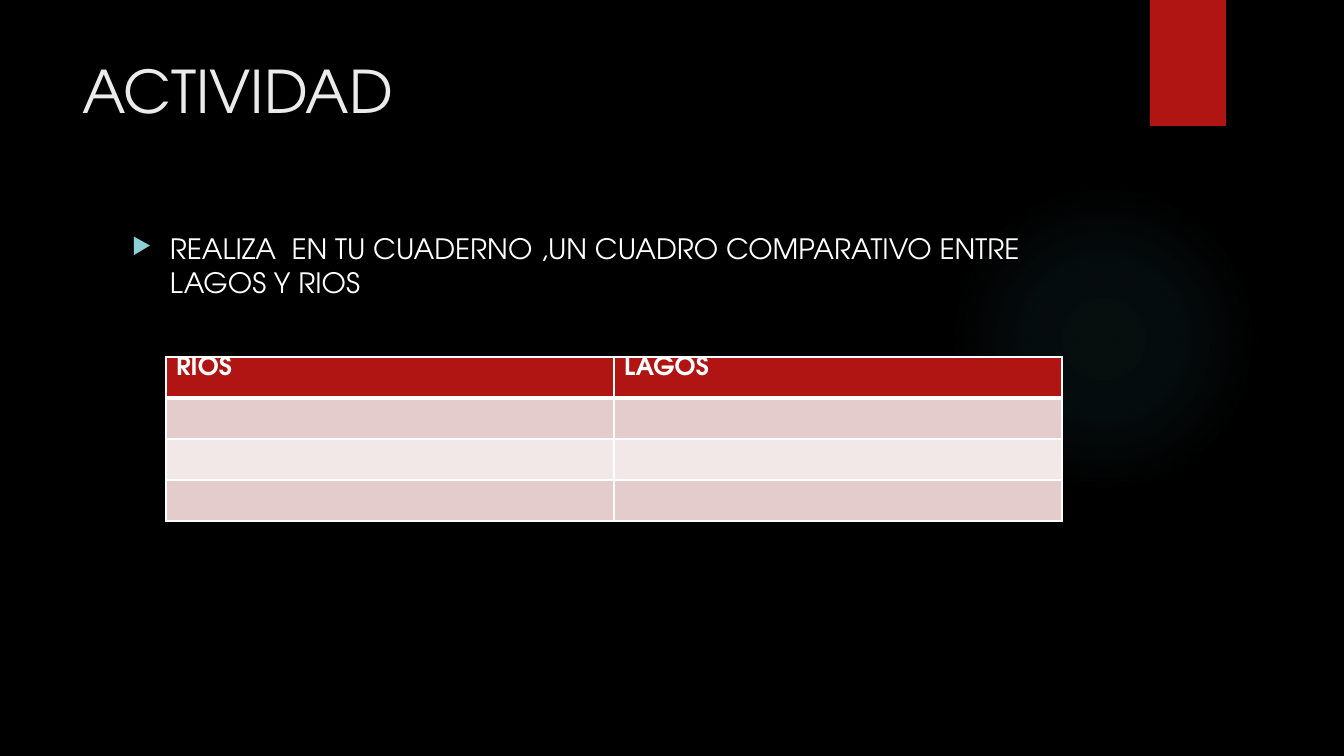
from lxml.etree import SubElement
from pptx import Presentation
from pptx.dml.color import RGBColor
from pptx.enum.shapes import MSO_SHAPE
from pptx.enum.text import MSO_ANCHOR, MSO_AUTO_SIZE, PP_ALIGN
from pptx.oxml import parse_xml
from pptx.oxml.ns import nsdecls, qn
from pptx.util import Pt

EMU_PER_PX = 914400 / 100.8
FONT = "TeX Gyre Adventor"
COLORS = {
    "background": "000000",
    "red": "B01513",
    "glow": "50B9C1",
    "title": "EBEBEB",
    "white": "FFFFFF",
    "bullet": "8AD0D6",
    "band_dark": "E4CCCC",
    "band_light": "F2E8E7",
}


def px(length):
    return round(length * EMU_PER_PX)


def rgb(name):
    return RGBColor.from_string(COLORS[name])


class SlideBuilder:
    def __init__(self, deck):
        self.slide = deck.slides.add_slide(deck.slide_layouts[5])
        background = self.slide.background.fill
        background.solid()
        background.fore_color.rgb = rgb("background")

    def add_run(self, paragraph, text, size, color, bold=False):
        run = paragraph.add_run()
        run.text = text
        run.font.name = FONT
        run.font.size = Pt(size)
        run.font.bold = bold
        run.font.color.rgb = rgb(color)

    def shape(self, kind, left, top, width, height, color):
        shape = self.slide.shapes.add_shape(kind, px(left), px(top), px(width), px(height))
        shape.shadow.inherit = False
        shape.fill.solid()
        shape.fill.fore_color.rgb = rgb(color)
        shape.line.fill.background()
        return shape

    def glow(self, left, top, diameter, color, stops):
        """Circle that fades out; stops are (position %, opacity %)."""
        circle = self.shape(MSO_SHAPE.OVAL, left, top, diameter, diameter, color)
        stop_xml = "".join(
            f'<a:gs pos="{position * 1000}"><a:srgbClr val="{COLORS[color]}">'
            f'<a:alpha val="{opacity * 1000}"/></a:srgbClr></a:gs>'
            for position, opacity in stops
        )
        gradient = parse_xml(
            f'<a:gradFill {nsdecls("a")} rotWithShape="1"><a:gsLst>{stop_xml}</a:gsLst>'
            '<a:path path="circle"><a:fillToRect l="50000" t="50000" r="50000" b="50000"/>'
            "</a:path></a:gradFill>"
        )
        properties = circle.fill._xPr
        properties.replace(properties.find(qn("a:solidFill")), gradient)

    def title(self, text, left, top, width, height, size):
        title = self.slide.shapes.title
        title.left, title.top = px(left), px(top)
        title.width, title.height = px(width), px(height)
        frame = title.text_frame
        frame.auto_size = MSO_AUTO_SIZE.NONE
        frame.word_wrap = True
        frame.vertical_anchor = MSO_ANCHOR.TOP
        heading = frame.paragraphs[0]
        heading.alignment = PP_ALIGN.LEFT
        self.add_run(heading, text, size, "title")

    def bullet(self, text, left, top, width, height, size, indent):
        box = self.slide.shapes.add_textbox(px(left), px(top), px(width), px(height))
        box.text_frame.word_wrap = True
        instruction = box.text_frame.paragraphs[0]
        properties = instruction._p.get_or_add_pPr()
        properties.set("marL", str(px(indent)))
        properties.set("indent", str(-px(indent)))
        bullet_color = SubElement(properties, qn("a:buClr"))
        SubElement(bullet_color, qn("a:srgbClr"), val=COLORS["bullet"])
        SubElement(properties, qn("a:buSzPct"), val="80000")
        SubElement(properties, qn("a:buChar"), char="▶")
        self.add_run(instruction, text, size, "white")

    def border(self, cell, widths):
        """Cell borders; widths in points for left, right, top, bottom."""
        properties = cell._tc.get_or_add_tcPr()
        for index, (side, width) in enumerate(zip("LRTB", widths)):
            properties.insert(index, parse_xml(
                f'<a:ln{side} {nsdecls("a")} w="{Pt(width)}"><a:solidFill>'
                f'<a:srgbClr val="{COLORS["white"]}"/></a:solidFill></a:ln{side}>'
            ))

    def table(self, headings, row_fills, left, top, column_width, row_height, size):
        table = self.slide.shapes.add_table(
            len(row_fills), len(headings), px(left), px(top),
            px(column_width * len(headings)), px(row_height * len(row_fills)),
        ).table
        for column in table.columns:
            column.width = px(column_width)
        for index, (row, color) in enumerate(zip(table.rows, row_fills)):
            row.height = px(row_height)
            top_line = 3 if index == 1 else 1
            bottom_line = 3 if index == 0 else 1
            for cell in row.cells:
                cell.margin_top = cell.margin_bottom = 0
                cell.fill.solid()
                cell.fill.fore_color.rgb = rgb(color)
                self.border(cell, (1, 1, top_line, bottom_line))
        for cell, heading in zip(table.rows[0].cells, headings):
            self.add_run(cell.text_frame.paragraphs[0], heading, size, "white", bold=True)


def main():
    deck = Presentation()
    deck.slide_width, deck.slide_height = px(1344), px(756)
    activity = SlideBuilder(deck)

    # Backdrop decoration
    activity.glow(949, 184, 310, "glow", [(0, 7), (36, 6), (69, 0)])
    activity.shape(MSO_SHAPE.RECTANGLE, 1150, 0, 76, 126, "red")

    # Heading and instruction
    activity.title("ACTIVIDAD", 72, 50, 1037, 154, 42)
    activity.bullet(
        "REALIZA  EN TU CUADERNO ,UN CUADRO COMPARATIVO ENTRE LAGOS Y RIOS",
        122, 227, 986, 463, size=20, indent=38,
    )

    # Comparison table
    activity.table(
        ["RIOS", "LAGOS"], ["red", "band_dark", "band_light", "band_dark"],
        166, 357, column_width=448, row_height=41, size=18,
    )

    deck.save("out.pptx")


if __name__ == "__main__":
    main()
